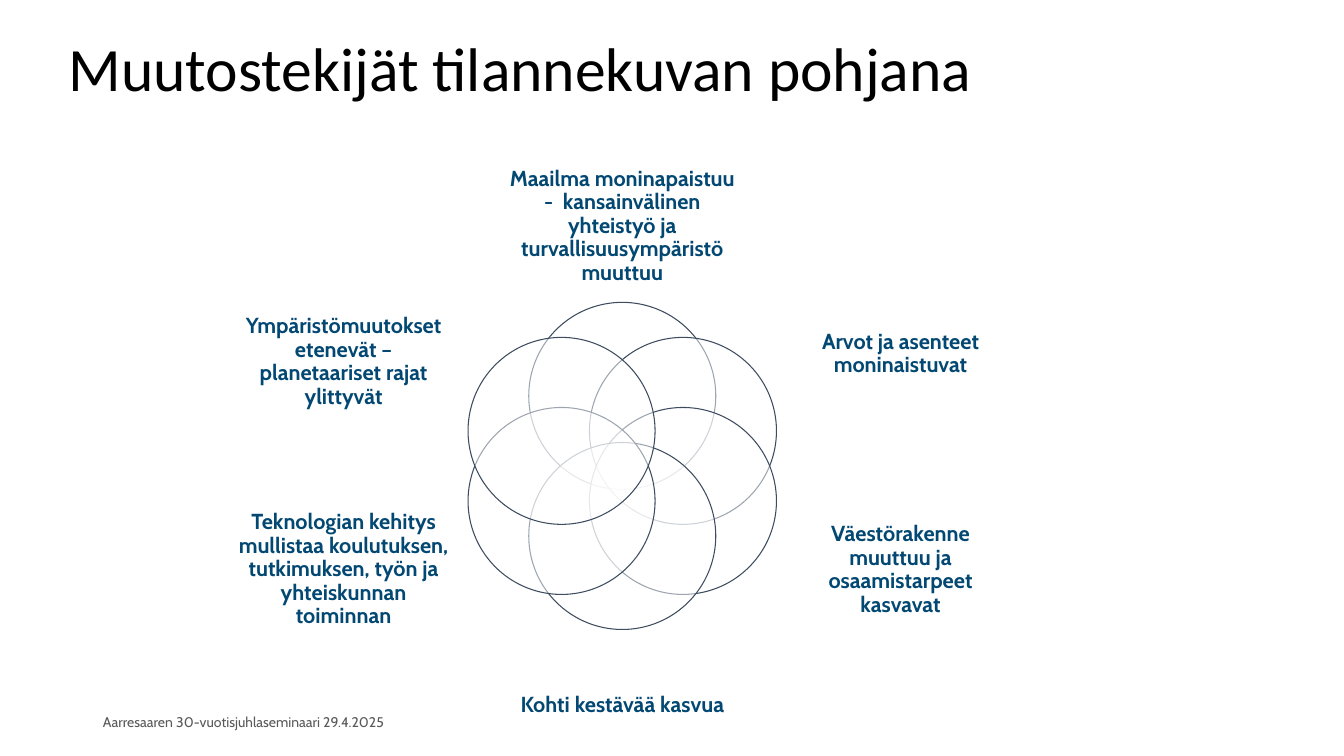
from math import cos, radians, sin

from lxml import etree
from pptx import Presentation
from pptx.dml.color import RGBColor
from pptx.enum.shapes import MSO_SHAPE
from pptx.enum.text import MSO_ANCHOR as Anchor, MSO_AUTO_SIZE as AutoSize, PP_ALIGN as Align
from pptx.oxml.ns import qn
from pptx.util import Inches, Pt

THEME = {
    "white": RGBColor.from_string("FFFFFF"),
    "outline": RGBColor.from_string("3E4C60"),
    "outline_width": Pt(1.5),
    "opacity": 50,
    "title": {"name": "Calibri", "size": Pt(88), "color": "000000", "bold": False},
    "label": {"name": "Cabin", "size": Pt(31), "color": "024873", "bold": True},
    "footer": {"name": "Cabin", "size": Pt(20), "color": "595959", "bold": False},
}

deck = Presentation()
deck.slide_width, deck.slide_height = Inches(26.66), Inches(15)
slide = deck.slides.add_slide(deck.slide_layouts[5])

# Grid of 100 columns and 100 rows
COL, ROW = deck.slide_width / 100, deck.slide_height / 100


def box(center_x, center_y, width, height):
    """Place a box by its centre, all in EMU."""
    return [round(v) for v in (center_x - width / 2, center_y - height / 2, width, height)]


def write(frame, text, style, align, spacing, margins=None):
    """Put one formatted paragraph in a text frame."""
    frame_format = {"word_wrap": True, "auto_size": AutoSize.NONE,
                    "vertical_anchor": Anchor.MIDDLE}
    if margins is not None:
        for side in ("left", "top", "right", "bottom"):
            frame_format[f"margin_{side}"] = margins
    for key, value in frame_format.items():
        setattr(frame, key, value)
    frame.text = text
    paragraph = frame.paragraphs[0]
    paragraph.alignment, paragraph.line_spacing = align, spacing
    font = paragraph.runs[0].font
    for key, value in THEME[style].items():
        if key == "color":
            font.color.rgb = RGBColor.from_string(value)
        else:
            setattr(font, key, value)


# Title
title = slide.shapes.title
title_box = box(48.9 * COL, 9.47 * ROW, 88.33 * COL, 18.93 * ROW)
for key, value in zip(("left", "top", "width", "height"), title_box):
    setattr(title, key, value)
write(title.text_frame, "Muutostekijät tilannekuvan pohjana", "title", Align.LEFT, 0.9)

# Change factors, clockwise from the top: text, centre column and row, columns, rows
LEFT, MIDDLE, RIGHT = 25.56, 46.3, 67
factors = [
    ("Maailma moninapaistuu -  kansainvälinen yhteistyö ja turvallisuusympäristö muuttuu",
     MIDDLE, 29.93, 17.37, 16.8),
    ("Arvot ja asenteet moninaistuvat", RIGHT, 46.8, 16.47, 18.4),
    ("Väestörakenne muuttuu ja osaamistarpeet kasvavat", RIGHT, 75.37, 16.47, 20.6),
    ("Kohti kestävää kasvua", MIDDLE, 93.27, 17.37, 16.8),
    ("Teknologian kehitys mullistaa koulutuksen, tutkimuksen, työn ja yhteiskunnan toiminnan",
     LEFT, 75.37, 16.47, 20.6),
    ("Ympäristömuutokset etenevät – planetaariset rajat ylittyvät", LEFT, 47.9, 16.47, 20.6),
]

# Ring of overlapping circles, each with its label
ring_x, ring_y = MIDDLE * COL, 61.63 * ROW
ring_radius, diameter = 9.27 * ROW, 24.73 * ROW
for i, (text, column, row, columns, rows) in enumerate(factors):
    angle = radians(360 / len(factors) * i)
    circle = slide.shapes.add_shape(MSO_SHAPE.OVAL, *box(
        ring_x + ring_radius * sin(angle), ring_y - ring_radius * cos(angle),
        diameter, diameter))
    circle.shadow.inherit = False
    circle.fill.solid()
    circle.fill.fore_color.rgb = THEME["white"]
    color = circle.fill._xPr.find(qn("a:solidFill"))[0]
    etree.SubElement(color, qn("a:alpha")).set("val", str(THEME["opacity"] * 1000))
    circle.line.color.rgb = THEME["outline"]
    circle.line.width = THEME["outline_width"]

    label = slide.shapes.add_textbox(*box(column * COL, row * ROW, columns * COL, rows * ROW))
    write(label.text_frame, text, "label", Align.CENTER, 0.9, margins=0)

# Event and date
footer = slide.shapes.add_textbox(*box(18.12 * COL, 95.53 * ROW, 33.76 * COL, 5.33 * ROW))
write(footer.text_frame, "Aarresaaren 30-vuotisjuhlaseminaari 29.4.2025", "footer",
      Align.CENTER, 1.0)

deck.save("out.pptx")
